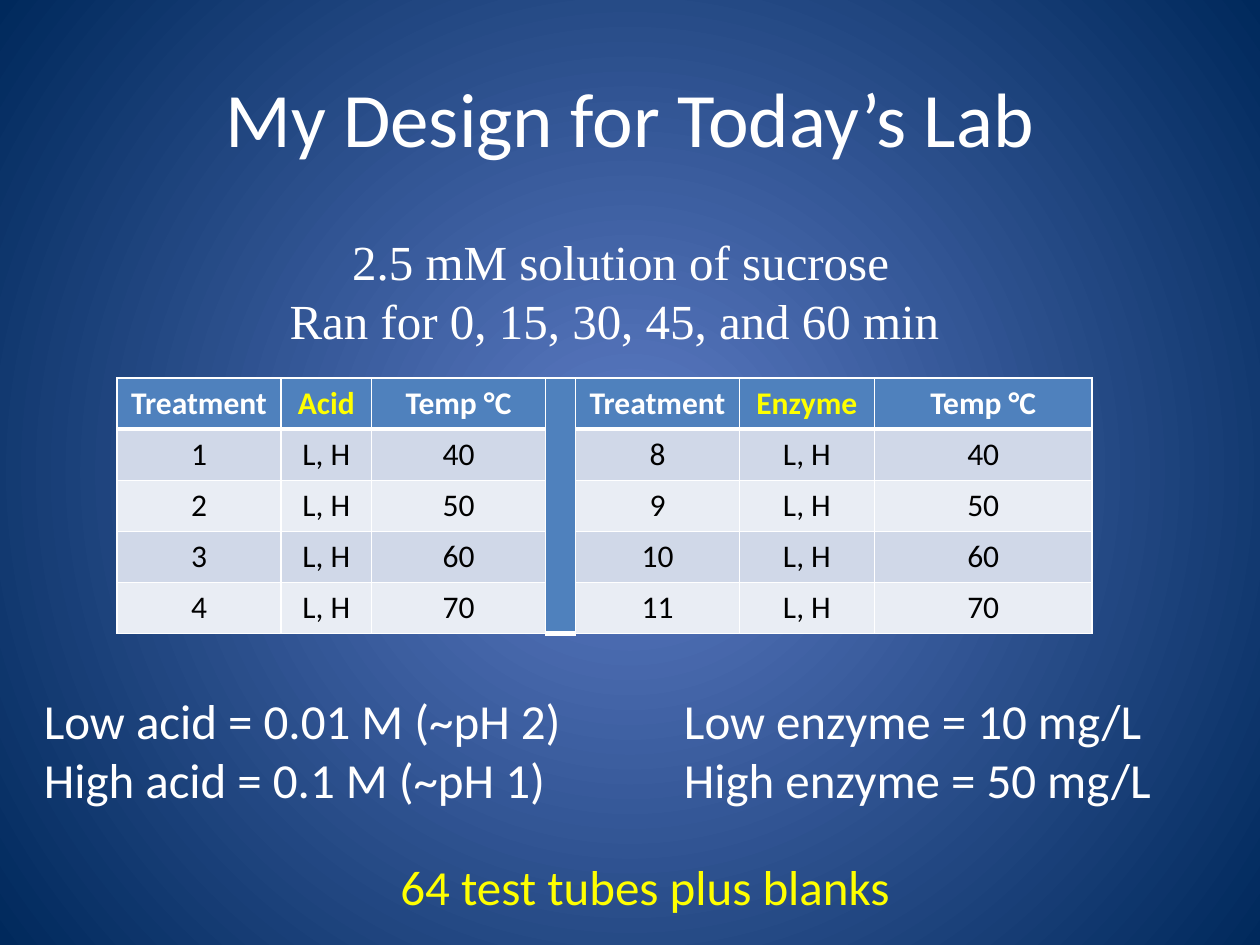
from lxml import etree
from pptx import Presentation
from pptx.dml.color import RGBColor
from pptx.enum.text import MSO_ANCHOR as Anchor, MSO_AUTO_SIZE as Auto, PP_ALIGN as Align
from pptx.oxml import parse_xml
from pptx.oxml.ns import qn
from pptx.util import Inches, Pt

WHITE, YELLOW, BLACK = "FFFFFF", "FFFF00", "000000"
HEAD, BANDS = "4F81BD", ("D0D8E8", "E9EDF4")
NS = ('xmlns:a="http://schemas.openxmlformats.org/drawingml/2006/main" '
      'xmlns:p="http://schemas.openxmlformats.org/presentationml/2006/main"')


def rgb(code):
    return RGBColor.from_string(code)


def add_run(para, text, size, color, face="Calibri", bold=False, align=None):
    para.alignment = align
    run = para.add_run()
    run.text = text
    font = run.font
    font.size, font.name, font.bold = Pt(size), face, bold
    font.color.rgb = rgb(color)


def add_back(slide, inner, outer):
    # Radial gradient, light in the middle
    stops = "".join(f'<a:gs pos="{pos}"><a:srgbClr val="{code}"/></a:gs>'
                    for pos, code in ((0, inner), (100000, outer)))
    back = parse_xml(
        f'<p:bg {NS}><p:bgPr><a:gradFill rotWithShape="1"><a:gsLst>{stops}</a:gsLst>'
        '<a:path path="circle"><a:fillToRect l="50000" t="50000" r="50000" b="50000"/>'
        '</a:path></a:gradFill><a:effectLst/></p:bgPr></p:bg>')
    slide.element.cSld.insert(0, back)


def add_title(slide, box, text):
    title = slide.shapes.title
    title.left, title.top, title.width, title.height = map(Inches, box)
    frame = title.text_frame
    frame.vertical_anchor = Anchor.MIDDLE
    add_run(frame.paragraphs[0], text, 44, WHITE, align=Align.CENTER)


def add_note(slide, box, lines, color=WHITE, face="Calibri", align=Align.LEFT):
    frame = slide.shapes.add_textbox(*map(Inches, box)).text_frame
    frame.word_wrap = False
    frame.auto_size = Auto.SHAPE_TO_FIT_TEXT
    for i, line in enumerate(lines):
        para = frame.add_paragraph() if i else frame.paragraphs[0]
        add_run(para, line, 28, color, face, align=align)


def add_edges(cell, top, bottom):
    props = cell._tc.get_or_add_tcPr()
    for side, width in (("L", 1), ("R", 1), ("T", top), ("B", bottom)):
        line = etree.SubElement(props, qn(f"a:ln{side}"), w=str(Pt(width)))
        fill = etree.SubElement(line, qn("a:solidFill"))
        etree.SubElement(fill, qn("a:srgbClr"), val=WHITE)


def add_grid(slide, box, widths, rows, gap):
    table = slide.shapes.add_table(len(rows), len(widths), *map(Inches, box)).table
    for col, width in zip(table.columns, widths):
        col.width = Inches(width)
    for r, row in enumerate(rows):
        table.rows[r].height = Inches(box[3] / len(rows))
        for c, text in enumerate(row):
            cell = table.cell(r, c)
            head = r == 0
            # Borders go before the fill
            add_edges(cell, 3 if r == 1 else 1, 3 if head or c == gap else 1)
            cell.fill.solid()
            cell.fill.fore_color.rgb = rgb(HEAD if head or c == gap else BANDS[(r - 1) % 2])
            if text:
                color = BLACK if not head else YELLOW if text in ("Acid", "Enzyme") else WHITE
                add_run(cell.text_frame.paragraphs[0], text, 18, color,
                        bold=head, align=Align.CENTER)
    # Divider between the two halves
    table.cell(0, gap).merge(table.cell(len(rows) - 1, gap))


def main():
    prs = Presentation()
    prs.slide_width, prs.slide_height = Inches(10), Inches(7.5)
    slide = prs.slides.add_slide(prs.slide_layouts[5])
    add_back(slide, "5E7CC5", "00295C")
    add_title(slide, (0.5, 0.3, 9, 1.25), "My Design for Today’s Lab")

    # Treatments
    rows = [("Treatment", "Acid", "Temp °C", "", "Treatment", "Enzyme", "Temp °C")]
    for n, temp in enumerate(("40", "50", "60", "70"), 1):
        rows.append((str(n), "L, H", temp, "", str(n + 7), "L, H", temp))
    add_grid(slide, (0.93, 3, 7.73, 2.03), (1.3, 0.72, 1.38, 0.23, 1.3, 1.07, 1.73), rows, 3)

    # Concentrations and conditions
    add_note(slide, (0.25, 5.43, 4.36, 1.04),
             ("Low acid = 0.01 M (~pH 2)", "High acid = 0.1 M (~pH 1)"))
    add_note(slide, (5.33, 5.43, 3.95, 1.04),
             ("Low enzyme = 10 mg/L", "High enzyme = 50 mg/L"))
    add_note(slide, (2.17, 1.79, 5.51, 1.04),
             ("2.5 mM solution of sucrose", "Ran for 0, 15, 30, 45, and 60 min "),
             face="Times New Roman", align=Align.CENTER)
    add_note(slide, (3.08, 6.75, 4.13, 0.57), ("64 test tubes plus blanks",), YELLOW)
    prs.save("out.pptx")


if __name__ == "__main__":
    main()
